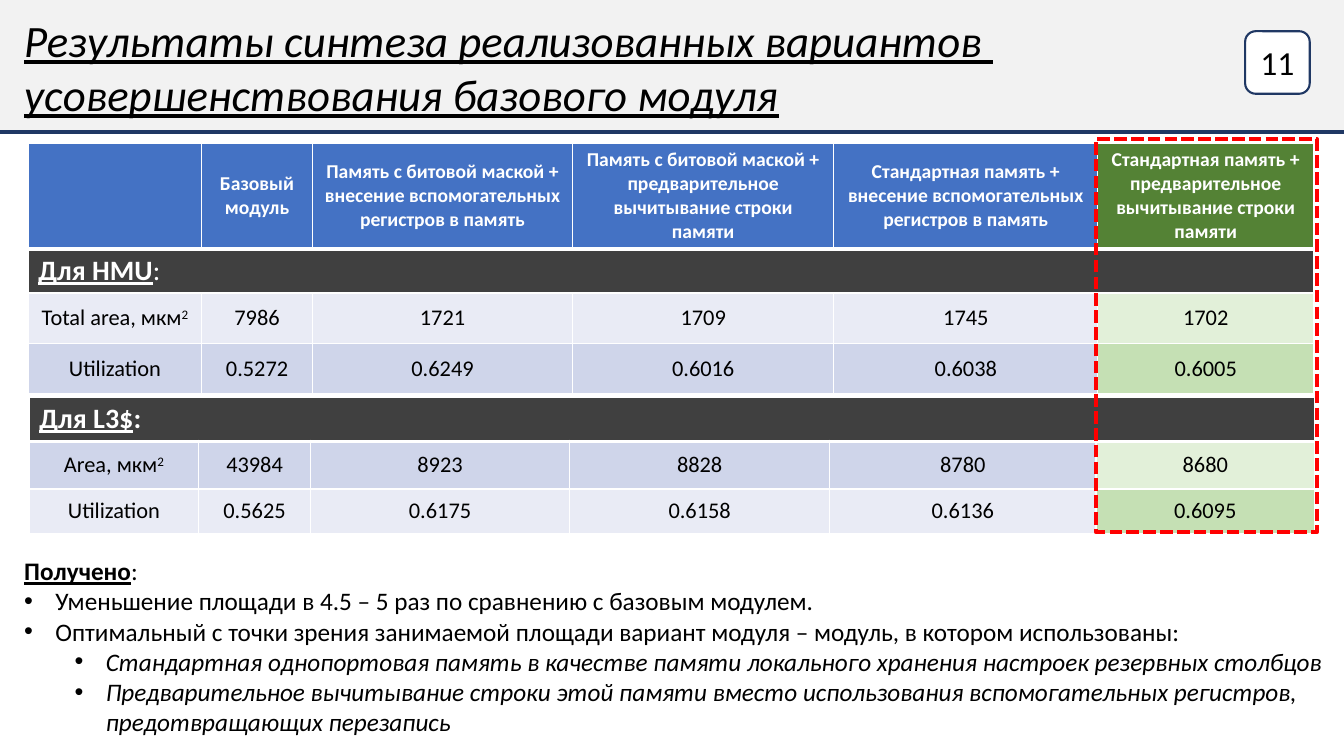
"""Build the slide that compares synthesis results of the module variants."""
from dataclasses import dataclass

from lxml.etree import SubElement
from pptx import Presentation
from pptx.dml.color import RGBColor as Color
from pptx.enum.dml import MSO_LINE as Dash
from pptx.enum.shapes import MSO_SHAPE as Shape
from pptx.enum.text import MSO_ANCHOR as Anchor, MSO_AUTO_SIZE as AutoSize, PP_ALIGN as Align
from pptx.oxml.ns import qn
from pptx.util import Emu, Inches, Pt


@dataclass(frozen=True)
class Theme:
    font: str = "Calibri"
    black: str = "000000"
    white: str = "FFFFFF"
    navy: str = "203864"
    band: str = "F2F2F2"
    section: str = "404040"
    accent: str = "FF0000"
    head: tuple = ("4472C4", "548235")
    light: str = "E9EBF5"
    dark: str = "CFD5EA"
    best: tuple = ("E2F0D9", "C5E0B4")
    title_size: int = 32
    number_size: int = 24
    section_size: int = 20
    body_size: int = 18
    cell_size: int = 16
    head_size: int = 14


theme = Theme()
UNDERLINED = {"bold": True, "underline": True}
ITALIC = {"italic": True}


def write(para, spans, size, color=theme.black, align=Align.LEFT):
    para.alignment = align
    para.space_before = Pt(0)
    for text, formats in spans:
        span = para.add_run()
        span.text = text
        span.font.name = theme.font
        span.font.size = Pt(size)
        span.font.color.rgb = Color.from_string(color)
        for name, value in formats.items():
            if name == "baseline":
                span._r.get_or_add_rPr().set(name, value)
            else:
                setattr(span.font, name, value)


def add_box(kind, bounds, fill, line, width):
    box = page.shapes.add_shape(kind, *map(Inches, bounds))
    box.shadow.inherit = False
    if fill:
        box.fill.solid()
        box.fill.fore_color.rgb = Color.from_string(fill)
    else:
        box.fill.background()
    box.line.color.rgb = Color.from_string(line)
    box.line.width = Pt(width)
    return box


deck = Presentation()
deck.slide_width, deck.slide_height = Inches(13.33), Inches(7.5)
page = deck.slides.add_slide(deck.slide_layouts[1])
title, body = page.placeholders

band = add_box(Shape.RECTANGLE, (-0.08, -0.08, 13.54, 1.39), theme.band, theme.navy, 3)
page.shapes.element.insert(2, band.element)
badge = add_box(Shape.ROUNDED_RECTANGLE, (12.35, 0.31, 0.64, 0.62), theme.white, theme.navy, 1.5)
badge.text_frame.vertical_anchor = Anchor.MIDDLE
write(badge.text_frame.paragraphs[0], [("11", {})], theme.number_size, align=Align.CENTER)

for holder, bounds, anchor in (
    (title, (0.14, 0.07, 11.52, 1.18), Anchor.MIDDLE),
    (body, (0.14, 5.46, 13.19, 1.92), Anchor.TOP),
):
    holder.left, holder.top, holder.width, holder.height = map(Inches, bounds)
    holder.text_frame.word_wrap = True
    holder.text_frame.auto_size = AutoSize.NONE
    holder.text_frame.vertical_anchor = anchor

title_lines = ("Результаты синтеза реализованных вариантов ", "усовершенствования базового модуля")
for index, text in enumerate(title_lines):
    para = title.text_frame.add_paragraph() if index else title.text_frame.paragraphs[0]
    write(para, [(text, {"italic": True, "underline": True})], theme.title_size)

masked, standard = "Память с битовой маской +", "Стандартная память +"
registers = "внесение вспомогательных регистров в память"
prefetch = "предварительное вычитывание строки памяти"
heading = [
    [], ["Базовый модуль"], [masked, registers], [masked, prefetch],
    [standard, registers], [standard, prefetch],
]
tables = [
    {
        "at": (0.28, 1.42), "columns": (1.72, 1.1, 2.58, 2.59, 2.62, 2.14),
        "heights": (1.03, 0.43, 0.5, 0.5), "heading": heading,
        "section": [("Для HMU", UNDERLINED), (":", {})],
        "label": "Total area, мкм", "fills": (theme.light, theme.dark),
        "area": ("7986", "1721", "1709", "1745", "1702"),
        "utilization": ("0.5272", "0.6249", "0.6016", "0.6038", "0.6005"),
    },
    {
        "at": (0.29, 3.94), "columns": (1.68, 1.11, 2.57, 2.58, 2.64, 2.17),
        "heights": (0.43, 0.47, 0.44), "heading": None,
        "section": [("Для L3$", UNDERLINED), (":", {"bold": True})],
        "label": "Area, мкм", "fills": (theme.dark, theme.light),
        "area": ("43984", "8923", "8828", "8780", "8680"),
        "utilization": ("0.5625", "0.6175", "0.6158", "0.6136", "0.6095"),
    },
]

for data in tables:
    columns, heights = data["columns"], data["heights"]
    frame = page.shapes.add_table(
        len(heights), len(columns),
        *map(Inches, (*data["at"], sum(columns), sum(heights))))
    grid = frame.table
    for column, width in zip(grid.columns, columns):
        column.width = Inches(width)
    for row, height in zip(grid.rows, heights):
        row.height = Inches(height)

    section_row = len(heights) - 3
    for row_index, row in enumerate(grid.rows):
        for column_index, cell in enumerate(row.cells):
            is_best = column_index == len(columns) - 1
            metric = row_index - section_row - 1
            cell.vertical_anchor = Anchor.MIDDLE
            lines, size, color, align = [], theme.head_size, theme.white, Align.CENTER
            if row_index < section_row:
                fill = theme.head[is_best]
                lines = [[(text, {"bold": True})] for text in data["heading"][column_index]]
            elif row_index == section_row:
                fill, size, align = theme.section, theme.section_size, Align.LEFT
                lines = [data["section"]] if column_index == 0 else []
            else:
                fill = theme.best[metric] if is_best else data["fills"][metric]
                size, color = theme.cell_size, theme.black
                if column_index:
                    values = (data["area"], data["utilization"])[metric]
                    lines = [[(values[column_index - 1], {})]]
                elif metric:
                    lines = [[("Utilization", {})]]
                else:
                    lines = [[(data["label"], {}), ("2", {"baseline": "30000"})]]
            for index, spans in enumerate(lines):
                para = cell.text_frame.add_paragraph() if index else cell.text_frame.paragraphs[0]
                write(para, spans, size, color, align)

            properties = cell._tc.get_or_add_tcPr()
            for side in ("lnL", "lnR", "lnT", "lnB"):
                thick = (side == "lnB" and row_index == 0) or (side == "lnT" and row_index == 1)
                border = SubElement(properties, qn(f"a:{side}"), w=str(Pt(3 if thick else 1)))
                paint = SubElement(border, qn("a:solidFill"))
                SubElement(paint, qn("a:srgbClr"), val=theme.white)
            cell.fill.solid()
            cell.fill.fore_color.rgb = Color.from_string(fill)
    grid.cell(section_row, 0).merge(grid.cell(section_row, len(columns) - 1))

findings = [
    (None, [("Получено", UNDERLINED), (":", {})]),
    (0, [("Уменьшение площади в 4.5 – 5 раз по сравнению с базовым модулем.", {})]),
    (0, [("Оптимальный с точки зрения занимаемой площади вариант модуля – "
          "модуль, в котором использованы:", {})]),
    (1, [("Стандартная однопортовая память в качестве памяти локального хранения "
          "настроек резервных столбцов", ITALIC)]),
    (1, [("Предварительное вычитывание строки этой памяти вместо использования "
          "вспомогательных регистров, предотвращающих перезапись", ITALIC)]),
]
for index, (level, spans) in enumerate(findings):
    para = body.text_frame.add_paragraph() if index else body.text_frame.paragraphs[0]
    write(para, spans, theme.body_size)
    para.level = level or 0
    bulleted = level is not None
    indent = Inches(0.31) if bulleted else Emu(0)
    properties = para._p.get_or_add_pPr()
    properties.set("marL", str(indent + Inches(0.5) * para.level))
    properties.set("indent", str(-indent))
    if bulleted:
        SubElement(properties, qn("a:buFont"), typeface="Arial")
        SubElement(properties, qn("a:buChar"), char="•")
    else:
        SubElement(properties, qn("a:buNone"))

highlight = add_box(Shape.RECTANGLE, (10.87, 1.38, 2.19, 3.9), None, theme.accent, 3)
highlight.line.dash_style = Dash.SQUARE_DOT

deck.save("out.pptx")
